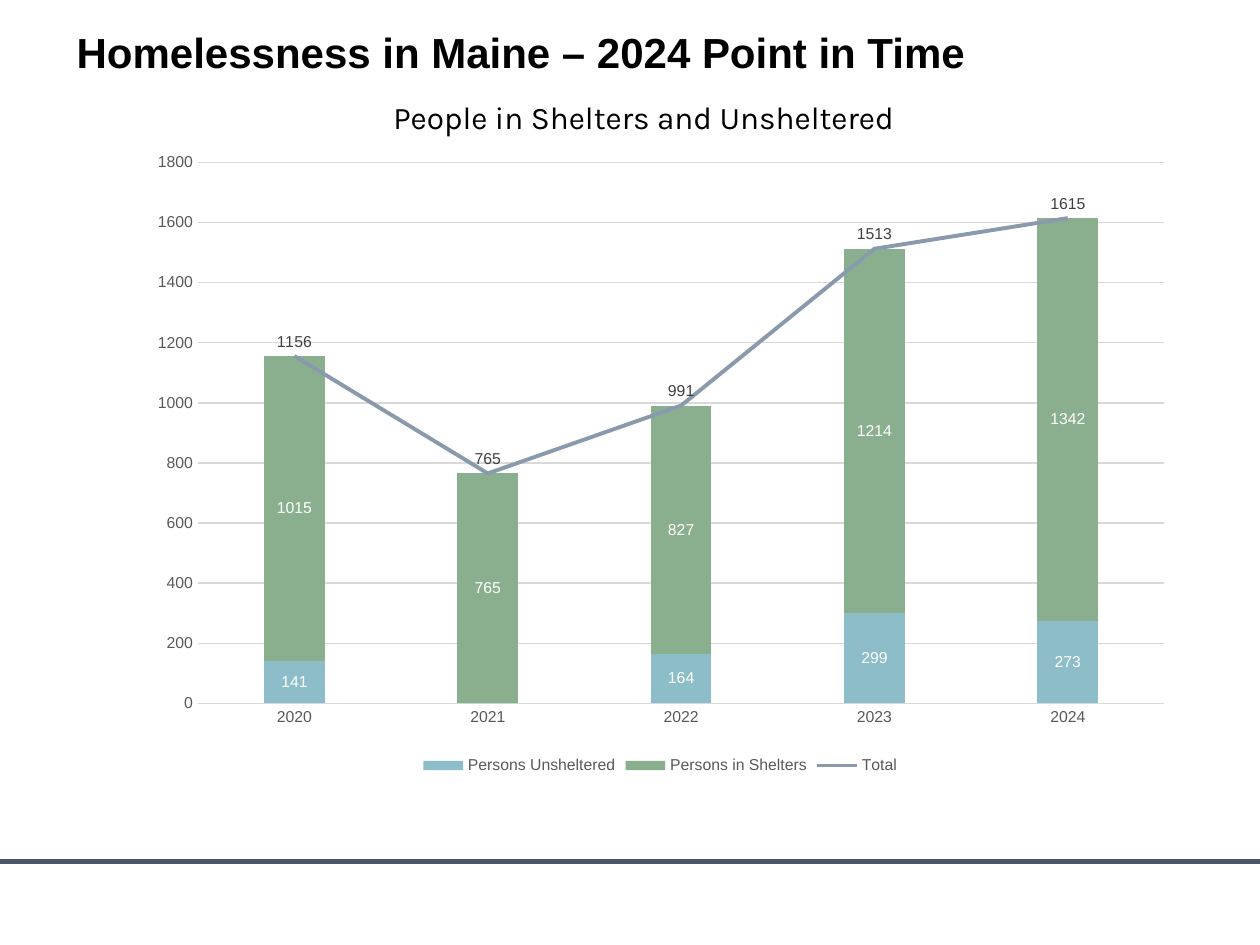
from dataclasses import dataclass

from lxml import etree
from pptx import Presentation, util as u
from pptx.chart.data import CategoryChartData
from pptx.dml.color import RGBColor
from pptx.enum import chart as ch, shapes, text
from pptx.oxml import parse_xml
from pptx.oxml.ns import nsdecls, qn


@dataclass(frozen=True)
class Theme:
    ink: str = "000000"
    rule: str = "495869"
    grid: str = "D9D9D9"
    axis: str = "595959"
    total_label: str = "404040"
    bar_label: str = "FFFFFF"
    unsheltered: str = "8CBDC8"
    sheltered: str = "8AAF8E"
    total: str = "899AAD"
    body_font: str = "Arial"
    subtitle_font: str = "Karla"
    title_size: float = 24
    subtitle_size: float = 18
    chart_size: float = 10
    label_size: float = 9


class Deck:
    def __init__(self, prs, theme):
        self.theme = theme
        self.s = prs.slides.add_slide(prs.slide_layouts[6])

    def style(self, font, size, color, name=None, bold=False):
        font.name = name or self.theme.body_font
        font.size = u.Pt(size)
        font.bold = bold
        font.color.rgb = RGBColor.from_string(color)

    def stroke(self, line, color, width):
        line.color.rgb = RGBColor.from_string(color)
        line.width = u.Pt(width)

    def rule(self, x1, y1, x2, y2, color, width):
        line = self.s.shapes.add_connector(
            shapes.MSO_CONNECTOR.STRAIGHT, *map(u.Pt, (x1, y1, x2, y2)))
        self.stroke(line.line, color, width)
        etree.SubElement(line._element.spPr, qn("a:effectLst"))

    def text(self, box, words, size, name, bold=False, align=text.PP_ALIGN.LEFT, wrap=True):
        tf = self.s.shapes.add_textbox(*map(u.Pt, box)).text_frame
        tf.word_wrap = wrap
        tf.auto_size = text.MSO_AUTO_SIZE.SHAPE_TO_FIT_TEXT
        p = tf.paragraphs[0]
        p.text = words
        p.alignment = align
        self.style(p.font, size, self.theme.ink, name, bold)

    def labels(self, series, color, position):
        labels = series.data_labels
        labels.show_value = True
        labels.position = position
        self.style(labels.font, self.theme.label_size, color)
        for i, value in enumerate(series.values):
            if value == 0:
                labels._element.insert(0, parse_xml(
                    f'<c:dLbl {nsdecls("c")}><c:idx val="{i}"/>'
                    '<c:delete val="1"/></c:dLbl>'))

    def last_series_to_line(self, chart):
        bars = chart.plots[0]._element
        line_chart = parse_xml(
            f'<c:lineChart {nsdecls("c")}><c:grouping val="standard"/>'
            '<c:varyColors val="0"/><c:marker val="1"/></c:lineChart>')
        ser = bars.findall(qn("c:ser"))[-1]
        for bar_only in ser.findall(qn("c:invertIfNegative")):
            ser.remove(bar_only)
        line_chart.insert(2, ser)
        for axis in bars.findall(qn("c:axId")):
            etree.SubElement(line_chart, qn("c:axId")).set("val", axis.get("val"))
        bars.addnext(line_chart)

    def plot_layout(self, chart, x, y, w, h):
        area = chart._chartSpace.chart.plotArea
        for old in area.findall(qn("c:layout")):
            area.remove(old)
        values = "".join(f'<c:{k} val="{v}"/>' for k, v in zip("xywh", (x, y, w, h)))
        area.insert(0, parse_xml(
            f'<c:layout {nsdecls("c")}><c:manualLayout><c:layoutTarget val="inner"/>'
            '<c:xMode val="edge"/><c:yMode val="edge"/>'
            f'{values}</c:manualLayout></c:layout>'))

    def combo_chart(self, box, categories, bars, line):
        t = self.theme
        data = CategoryChartData()
        data.categories = categories
        for name, values, _ in [*bars, line]:
            data.add_series(name, values)
        chart = self.s.shapes.add_chart(
            ch.XL_CHART_TYPE.COLUMN_STACKED, *map(u.Pt, box), data).chart
        self.last_series_to_line(chart)
        self.plot_layout(chart, 0.06, 0.03, 0.92, 0.85)
        self.style(chart.font, t.chart_size, t.ink)
        chart.has_title = False
        chart.has_legend = True
        chart.legend.position = ch.XL_LEGEND_POSITION.BOTTOM
        chart.legend.include_in_layout = False
        self.style(chart.legend.font, t.label_size, t.axis)

        for axis in (chart.category_axis, chart.value_axis):
            axis.major_tick_mark = axis.minor_tick_mark = ch.XL_TICK_MARK.NONE
            self.style(axis.tick_labels.font, t.label_size, t.axis)
        self.stroke(chart.category_axis.format.line, t.grid, 0.75)
        chart.value_axis.format.line.fill.background()
        self.stroke(chart.value_axis.major_gridlines.format.line, t.grid, 0.75)
        chart.value_axis.minimum_scale = 0
        chart.value_axis.maximum_scale = 1800
        chart.value_axis.major_unit = 200

        columns, trend = chart.plots
        columns.gap_width = 219
        columns.overlap = 100
        columns.vary_by_categories = False
        for series, (_, _, color) in zip(columns.series, bars):
            series.format.fill.solid()
            series.format.fill.fore_color.rgb = RGBColor.from_string(color)
            self.labels(series, t.bar_label, ch.XL_LABEL_POSITION.CENTER)
        total = trend.series[0]
        total.smooth = False
        total.marker.style = ch.XL_MARKER_STYLE.NONE
        self.stroke(total.format.line, line[2], 2.25)
        self.labels(total, t.total_label, ch.XL_LABEL_POSITION.ABOVE)


def main():
    prs = Presentation()
    prs.slide_width, prs.slide_height = u.Pt(720), u.Pt(540)
    t = Theme()
    deck = Deck(prs, t)
    deck.rule(0, 492.5, 720, 492.5, t.rule, 3)
    deck.text((36.7, 11.5, 527, 36), "Homelessness in Maine – 2024 Point in Time",
              t.title_size, t.body_font, bold=True, wrap=False)
    deck.text((104.4, 52.6, 527, 29), "People in Shelters and Unsheltered",
              t.subtitle_size, t.subtitle_font, align=text.PP_ALIGN.CENTER)

    unsheltered = (141, 0, 164, 299, 273)
    sheltered = (1015, 765, 827, 1214, 1342)
    total = [a + b for a, b in zip(unsheltered, sheltered)]
    deck.combo_chart(
        (77, 82, 600.5, 363.6),
        [str(year) for year in range(2020, 2025)],
        [("Persons Unsheltered", unsheltered, t.unsheltered),
         ("Persons in Shelters", sheltered, t.sheltered)],
        ("Total", total, t.total))
    prs.save("out.pptx")


if __name__ == "__main__":
    main()
